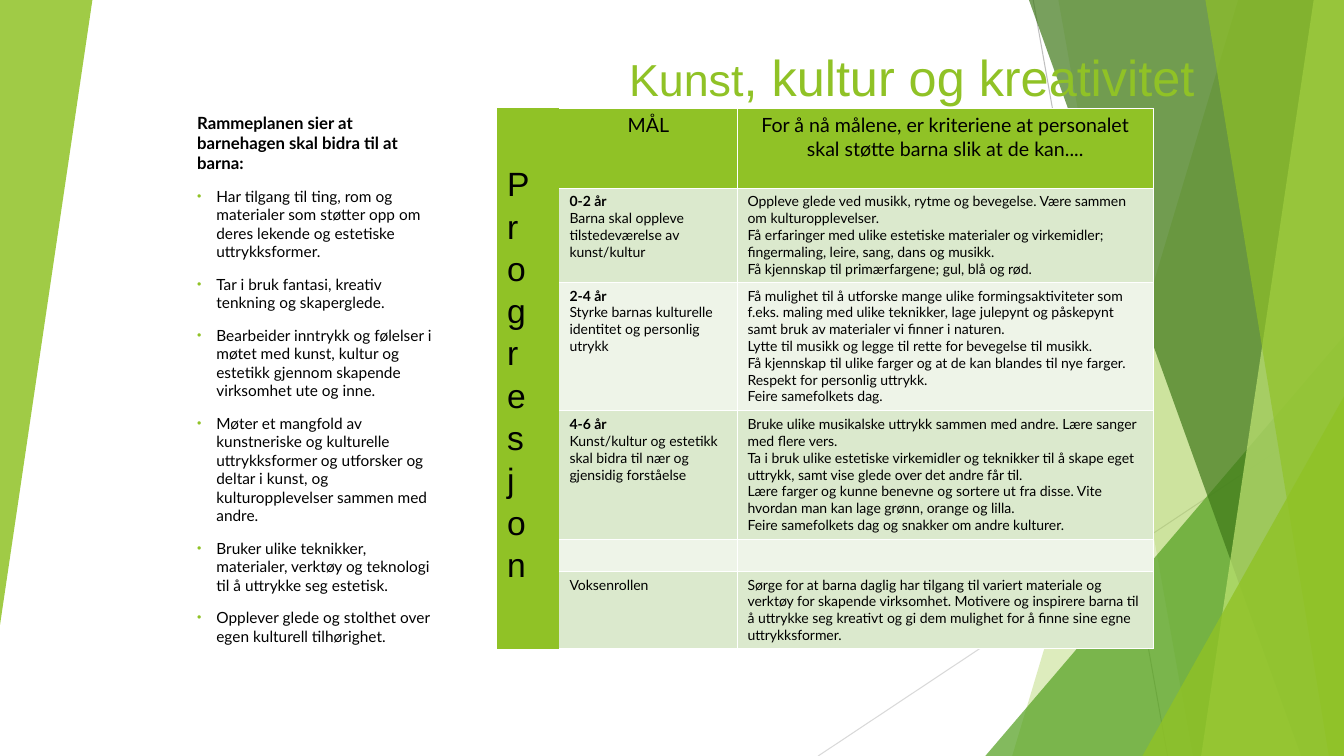
from lxml.etree import SubElement
from pptx import Presentation
from pptx.dml.color import RGBColor
from pptx.enum.shapes import MSO_CONNECTOR, MSO_SHAPE
from pptx.enum.text import MSO_ANCHOR, PP_ALIGN
from pptx.oxml.ns import qn
from pptx.util import Inches, Pt

COLUMNS, ROWS = 160, 90
UNIT = Inches(7.5) / ROWS
GREEN, BLACK, WHITE = "90C226", "000000", "FFFFFF"
BANDS = ("DBE9CD", "EEF4E8")

# Facets from back to front: left edge at the top and bottom, or a triangle's box.
VEILS = [
    ("veil", (147.4, 120.5), GREEN, 30),
    ("veil", (126, 142), GREEN, 20),
    ("triangle", (117.3, 40, 42.7, 50), "54A021", 72),
    ("veil", (122.5, 154.9), "3F7819", 70),
    ("veil", (156.4, 143), "C0E474", 70),
    ("veil", (143.5, 158.2), GREEN, 65),
    ("triangle", (136, 47.2, 24, 42.8), GREEN, 80),
]
FRAMEWORK_TITLE = "Rammeplanen sier at barnehagen skal bidra til at barna:"
FRAMEWORK_GOALS = [
    "Har tilgang til ting, rom og materialer som støtter opp om deres lekende og estetiske uttrykksformer.",
    "Tar i bruk fantasi, kreativ tenkning og skaperglede.",
    "Bearbeider inntrykk og følelser i møtet med kunst, kultur og estetikk gjennom skapende virksomhet ute og inne.",
    "Møter et mangfold av kunstneriske og kulturelle uttrykksformer og utforsker og deltar i kunst, "
    "og kulturopplevelser sammen med andre.",
    "Bruker ulike teknikker, materialer, verktøy og teknologi til å uttrykke seg estetisk.",
    "Opplever glede og stolthet over egen kulturell tilhørighet.",
]
TABLE_COLUMNS = (7.4, 21.2, 49.5)
TABLE_ROWS = (9.5, 11.2, 15.3, 15.3, 3.8, 9.1)
HEADINGS = (["MÅL"], ["For å nå målene, er kriteriene at personalet skal støtte barna slik at de kan...."])
PLAN = [
    (["0-2 år", "Barna skal oppleve tilstedeværelse av kunst/kultur"],
     ["Oppleve glede ved musikk, rytme og bevegelse. Være sammen om kulturopplevelser.",
      "Få erfaringer med ulike estetiske materialer og virkemidler; fingermaling, leire, sang, dans og musikk.",
      "Få kjennskap til primærfargene; gul, blå og rød."]),
    (["2-4 år", "Styrke barnas kulturelle identitet og personlig utrykk"],
     ["Få mulighet til å utforske mange ulike formingsaktiviteter som f.eks. maling med ulike teknikker, "
      "lage julepynt og påskepynt samt bruk av materialer vi finner i naturen.",
      "Lytte til musikk og legge til rette for bevegelse til musikk.",
      "Få kjennskap til ulike farger og at de kan blandes til nye farger. Respekt for personlig uttrykk.",
      "Feire samefolkets dag."]),
    (["4-6 år", "Kunst/kultur og estetikk skal bidra til nær og gjensidig forståelse"],
     ["Bruke ulike musikalske uttrykk sammen med andre. Lære sanger med flere vers.",
      "Ta i bruk ulike estetiske virkemidler og teknikker til å skape eget uttrykk, "
      "samt vise glede over det andre får til.",
      "Lære farger og kunne benevne og sortere ut fra disse. Vite hvordan man kan lage grønn, orange og lilla.",
      "Feire samefolkets dag og snakker om andre kulturer."]),
    ([""], [""]),
    (["Voksenrollen"],
     ["Sørge for at barna daglig har tilgang til variert materiale og verktøy for skapende virksomhet. "
      "Motivere og inspirere barna til å uttrykke seg kreativt og gi dem mulighet for å finne sine egne "
      "uttrykksformer."]),
]


def grid(*lengths):
    """Turn grid columns or rows into slide lengths."""
    return [round(length * UNIT) for length in lengths]


def color(hex_string):
    return RGBColor.from_string(hex_string)


def set_font(font, name, size, hex_string=BLACK, bold=False):
    font.name, font.size, font.bold = name, Pt(size), bold
    font.color.rgb = color(hex_string)


def paint(shape, hex_string, opacity):
    shape.shadow.inherit = False
    shape.line.fill.background()
    shape.fill.solid()
    shape.fill.fore_color.rgb = color(hex_string)
    solid = shape.fill._xPr.find(qn("a:solidFill"))
    SubElement(solid[0], qn("a:alpha"), val=str(opacity * 1000))


def add_line(slide, ends, hex_string):
    line = slide.shapes.add_connector(MSO_CONNECTOR.STRAIGHT, *grid(*ends))
    line.line.color.rgb = color(hex_string)
    line.line.width = Pt(0.75)
    SubElement(line._element.spPr, qn("a:effectLst"))


def add_veil(slide, edges):
    """Draw a panel from a slanting left edge to the right side of the slide."""
    top, bottom = edges
    builder = slide.shapes.build_freeform(*grid(top, 0))
    corners = ((COLUMNS, 0), (COLUMNS, ROWS), (bottom, ROWS))
    builder.add_line_segments([grid(*corner) for corner in corners], close=True)
    return builder.convert_to_shape()


def add_triangle(slide, box):
    triangle = slide.shapes.add_shape(MSO_SHAPE.ISOSCELES_TRIANGLE, *grid(*box))
    triangle.adjustments[0] = 1
    return triangle


def add_backdrop(slide):
    add_line(slide, (123, 0, 139, ROWS), "BFBFBF")
    add_line(slide, (COLUMNS, 48.4, 97.4, ROWS), "D9D9D9")
    for kind, geometry, hex_string, opacity in VEILS:
        add_facet = add_veil if kind == "veil" else add_triangle
        paint(add_facet(slide, geometry), hex_string, opacity)
    left_wedge = add_triangle(slide, (0, 0, 11, 74.4))
    left_wedge.rotation = 180
    paint(left_wedge, GREEN, 85)


def add_text_frame(slide, box):
    text_frame = slide.shapes.add_textbox(*grid(*box)).text_frame
    text_frame.word_wrap = True
    return text_frame


def add_title(slide):
    text_frame = add_text_frame(slide, (42.2, 4.3, 101.2, 9))
    text_frame.vertical_anchor = MSO_ANCHOR.BOTTOM
    paragraph = text_frame.paragraphs[0]
    paragraph.alignment = PP_ALIGN.RIGHT
    for text, size in (("Kunst", 32), (", kultur og kreativitet", 36)):
        run = paragraph.add_run()
        run.text = text
        set_font(run.font, "Arial", size, GREEN)


def add_bullet(paragraph):
    properties = paragraph._p.get_or_add_pPr()
    indent = Inches(0.19)
    properties.set("marL", str(indent))
    properties.set("indent", str(-indent))
    bullet_color = SubElement(properties, qn("a:buClr"))
    SubElement(bullet_color, qn("a:srgbClr"), val=GREEN)
    SubElement(properties, qn("a:buSzPct"), val="80000")
    SubElement(properties, qn("a:buFont"), typeface="Arial")
    SubElement(properties, qn("a:buChar"), char="•")


def add_framework(slide):
    text_frame = add_text_frame(slide, (22.3, 12.8, 31.2, 73.7))
    heading = text_frame.paragraphs[0]
    heading.text = FRAMEWORK_TITLE
    set_font(heading.font, "Lato", 12, bold=True)
    for goal in FRAMEWORK_GOALS:
        paragraph = text_frame.add_paragraph()
        paragraph.text = goal
        paragraph.space_before = Pt(10)
        add_bullet(paragraph)
        set_font(paragraph.font, "Lato", 11)


def style_cell(cell, fill, white_sides):
    properties = cell._tc.get_or_add_tcPr()
    for side in "LRTB":
        border = SubElement(properties, qn(f"a:ln{side}"), w=str(Pt(1)))
        if side in white_sides:
            solid = SubElement(border, qn("a:solidFill"))
            SubElement(solid, qn("a:srgbClr"), val=WHITE)
        else:
            SubElement(border, qn("a:noFill"))
    cell.fill.solid()
    cell.fill.fore_color.rgb = color(fill)


def write_cell(cell, lines, size, alignment, bold_first):
    cell.text_frame.text = "\n".join(lines)
    for index, paragraph in enumerate(cell.text_frame.paragraphs):
        paragraph.alignment = alignment
        set_font(paragraph.font, "Lato", size, bold=bold_first and index == 0)


def add_plan(slide):
    box = grid(59.2, 12.9, sum(TABLE_COLUMNS), sum(TABLE_ROWS))
    table = slide.shapes.add_table(len(TABLE_ROWS), len(TABLE_COLUMNS), *box).table
    table.first_row = table.horz_banding = False
    for column, width in zip(table.columns, grid(*TABLE_COLUMNS)):
        column.width = width
    for row, height in zip(table.rows, grid(*TABLE_ROWS)):
        row.height = height
    for row_index, contents in enumerate([HEADINGS, *PLAN]):
        is_heading = row_index == 0
        fill = GREEN if is_heading else BANDS[(row_index - 1) % 2]
        size, alignment = (14, PP_ALIGN.CENTER) if is_heading else (10, PP_ALIGN.LEFT)
        style_cell(table.cell(row_index, 0), GREEN, "")
        for column_index, lines in enumerate(contents, 1):
            cell = table.cell(row_index, column_index)
            style_cell(cell, fill, "RTB" if column_index == 1 else "LRTB")
            write_cell(cell, lines, size, alignment, column_index == 1 and len(lines) > 1)
    table.cell(0, 0).merge(table.cell(len(TABLE_ROWS) - 1, 0))


def add_progression(slide):
    """Stack the letters of the word in a box one letter wide."""
    text_frame = add_text_frame(slide, (59.2, 18.6, 4.7, 49.7))
    text_frame.text = "Progres\njon"
    for paragraph in text_frame.paragraphs:
        paragraph.line_spacing = 1.05
        set_font(paragraph.font, "Arial", 24)


def main():
    presentation = Presentation()
    presentation.slide_width, presentation.slide_height = grid(COLUMNS, ROWS)
    slide = presentation.slides.add_slide(presentation.slide_layouts[6])
    for add_part in (add_backdrop, add_title, add_framework, add_plan, add_progression):
        add_part(slide)
    presentation.save("out.pptx")


if __name__ == "__main__":
    main()
